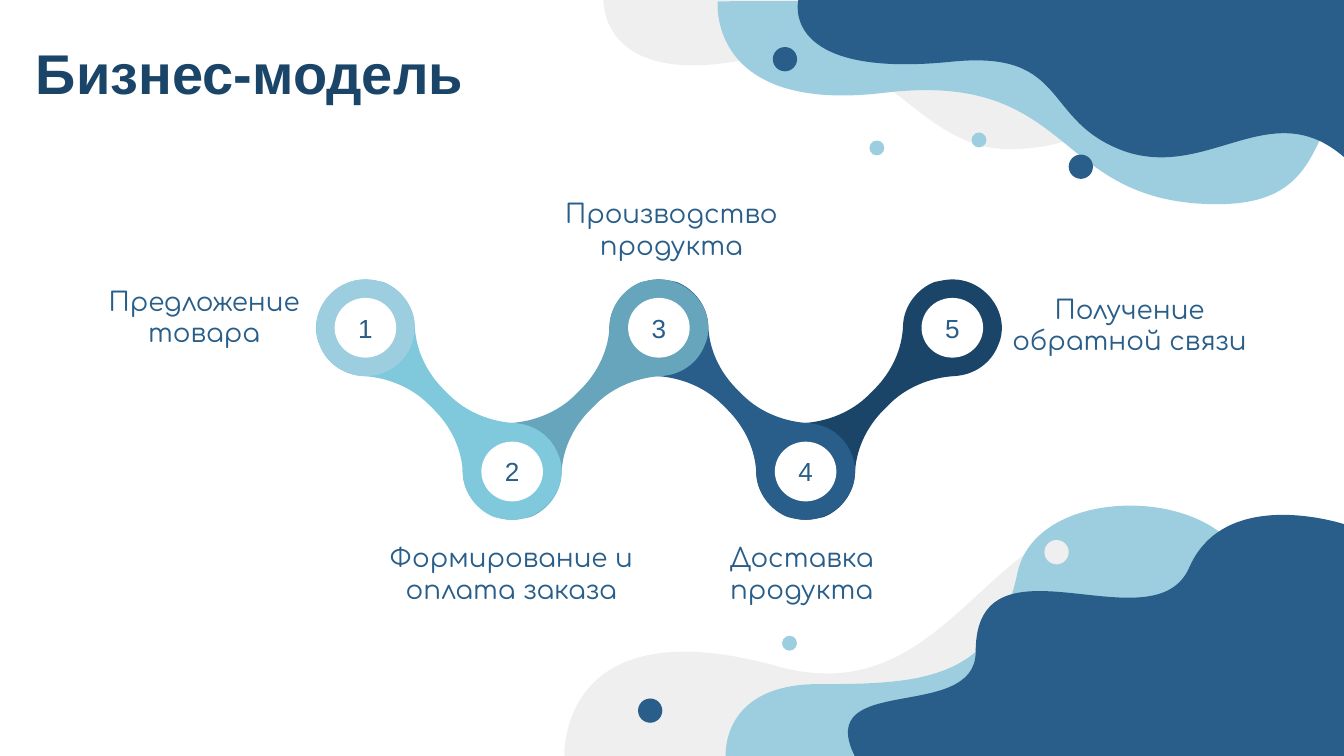
from typing import NamedTuple

from lxml import etree
from pptx import Presentation
from pptx.dml.color import RGBColor
from pptx.enum.shapes import MSO_SHAPE
from pptx.enum.text import MSO_ANCHOR, PP_ALIGN
from pptx.oxml.ns import qn
from pptx.util import Pt

OVAL = MSO_SHAPE.OVAL
TOP, MIDDLE = MSO_ANCHOR.TOP, MSO_ANCHOR.MIDDLE
LEFT, CENTER = PP_ALIGN.LEFT, PP_ALIGN.CENTER

NAVY, BLUE, TEAL, CYAN = "1A4568", "285E89", "66A5BB", "80C9DD"
SKY, GRAY, WHITE = "9DCEDF", "EFEFEF", "FFFFFF"

Point = tuple[float, float]
Segment = tuple[float, ...]  # 2 numbers: line, 6 numbers: cubic curve


class Blob(NamedTuple):
    color: str
    start: Point
    segments: list[Segment]


class Dot(NamedTuple):
    x: float
    y: float
    size: float
    color: str


class Label(NamedTuple):
    x: float
    y: float
    w: float
    h: float
    lines: tuple[str, ...]
    size: float = 14
    font: str = "Comfortaa"
    color: str = BLUE
    bold: bool = False
    align: PP_ALIGN = CENTER
    anchor: MSO_ANCHOR = TOP


BLOBS = [
    Blob(GRAY, (302.4, 405), [(302.4, 405, 298.8, 324, 416.9, 357.1),
                              (506.2, 381.6, 528.5, 277.9, 599, 277.9),
                              (650.9, 277.9, 713.5, 308.2, 694.8, 405)]),
    Blob(GRAY, (323.3, 0), [(323.3, 0, 321.1, 50.4, 407.5, 30.2),
                            (472.3, 15.1, 488.9, 79.9, 540.7, 79.9),
                            (578.2, 79.9, 624.2, 61.2, 610.6, 0)]),
    Blob(SKY, (384.5, 0.7), [(384.5, 0.7, 378.7, 61.2, 473.8, 49.7),
                             (576.7, 37.4, 563, 109.4, 652.3, 109.4),
                             (726.5, 109.4, 690.5, 41, 755.3, 35.3),
                             (820.1, 29.5, 805, 0, 805, 0)]),
    Blob(SKY, (388.8, 405), [(388.8, 405, 385.9, 366.5, 438.5, 366.5),
                             (491.8, 366.5, 532.8, 365, 545, 307.4),
                             (554.4, 260.6, 645.1, 259.9, 665.3, 298.8),
                             (685.4, 337, 720, 337, 720, 337), (720, 405)]),
    Blob(BLUE, (720, 280.8), [(720, 280.8, 656.6, 259.9, 637.2, 303.8),
                              (618.5, 347.8, 522.7, 281.5, 522.7, 349.2),
                              (522.7, 387.4, 435.6, 360, 457.9, 405), (720, 405)]),
    Blob(BLUE, (427.7, 0), [(427.7, 0, 416.9, 42.5, 509.8, 33.1),
                            (573.8, 26.6, 557.3, 65.5, 603.4, 81.4),
                            (648, 95.8, 681.1, 50.4, 720, 84.2), (720, 0)]),
]
DOTS = [
    Dot(579, 89.3, 13, BLUE), Dot(469.8, 79.3, 8, SKY), Dot(524.5, 75, 8, SKY),
    Dot(420.5, 31.7, 13, BLUE), Dot(348.3, 380.7, 13, BLUE),
    Dot(423, 344.6, 8, SKY), Dot(566, 295.8, 13, GRAY),
]
LABELS = [
    Label(12.2, 6.5, 419, 64.8, ("Бизнес-модель",), 30, "Arial", NAVY, True, LEFT, MIDDLE),
    Label(-27.4, 159.1, 273.6, 20.9, ("Предложение", "товара"), anchor=MIDDLE),
    Label(187.9, 283, 172.1, 35.3, ("Формирование и оплата заказа",)),
    Label(275.8, 103.7, 167.8, 9.4, ("Производство продукта",)),
    Label(371.5, 283, 115.9, 20.9, ("Доставка продукта",)),
    Label(519.1, 149.8, 172.1, 28.8, ("Получение обратной связи",)),
]

# Chain: nodes alternate between an upper and a lower row
NODE_X, NODE_Y, STEP, DROP = 195.8, 175.6, 78.6, 77
LINK_COLORS = [CYAN, TEAL, BLUE, NAVY]
# Left edge of a link, measured from the centre of its upper node
LINK_START = (0, -25.9)
LINK_EDGE = [
    (-7.2, -25.9, -13.7, -23, -18.7, -18),
    (-25.9, -10.8, -28.8, 0, -24.5, 9.4),
    (-20.9, 18.7, -12.2, 25.2, -1.4, 25.9),
    (11.5, 26.6, 24.5, 31.7, 33.8, 41),
    (36.7, 43.9),
    (46.1, 53.3, 51.8, 65.5, 52.2, 78.5),
    (52.6, 88.6, 59.8, 97.9, 69.1, 101.5),
    (72.7, 102.2, 75.6, 102.9, 78.6, 102.9),
]


def paint(sp, color: str) -> None:
    sp.fill.solid()
    sp.fill.fore_color.rgb = RGBColor.from_string(color)
    sp.line.fill.background()
    sp.shadow.inherit = False


def to_points(segments: list[Segment]) -> list[Point]:
    return [pt for seg in segments for pt in zip(seg[::2], seg[1::2])]


def add_outline(shapes, pts: list[Point], segments: list[Segment], color: str) -> None:
    """Build the outline, then join each three points of a curve into one node."""
    emu = [(Pt(x), Pt(y)) for x, y in pts]
    fb = shapes.build_freeform(*emu[0])
    fb.add_line_segments(emu[1:], close=True)
    sp = fb.convert_to_shape()
    paint(sp, color)
    nodes = iter(list(sp._element.iter(qn("a:lnTo"))))
    for seg in segments:
        group = [next(nodes) for _ in range(len(seg) // 2)]
        if len(group) == 3:
            curve = etree.Element(qn("a:cubicBezTo"))
            group[0].addprevious(curve)
            for node in group:
                curve.append(node[0])
                node.getparent().remove(node)


def add_oval(shapes, x: float, y: float, w: float, h: float, color: str):
    sp = shapes.add_shape(OVAL, Pt(x - w / 2), Pt(y - h / 2), Pt(w), Pt(h))
    paint(sp, color)
    return sp


def add_run(p, text: str, size: float, font: str, color: str, bold: bool = False) -> None:
    r = p.add_run()
    r.text = text
    r.font.size, r.font.name, r.font.bold = Pt(size), font, bold
    r.font.color.rgb = RGBColor.from_string(color)


def add_label(shapes, lb: Label) -> None:
    tf = shapes.add_textbox(Pt(lb.x), Pt(lb.y), Pt(lb.w), Pt(lb.h)).text_frame
    tf.word_wrap = True
    tf.vertical_anchor = lb.anchor
    tf.margin_left = tf.margin_right = tf.margin_top = tf.margin_bottom = Pt(7.2)
    for i, line in enumerate(lb.lines):
        p = tf.add_paragraph() if i else tf.paragraphs[0]
        p.alignment = lb.align
        add_run(p, line, lb.size, lb.font, lb.color, lb.bold)


def add_link(shapes, i: int, color: str) -> None:
    """Join node i to the next one; odd links rise, so they are mirrored."""
    edge = to_points(LINK_EDGE)
    pts = [LINK_START] + edge + [(STEP - x, DROP - y) for x, y in edge]
    if i % 2:
        pts = [(STEP - x, y) for x, y in pts]
    left = NODE_X + i * STEP
    add_outline(shapes, [(left + x, NODE_Y + y) for x, y in pts], LINK_EDGE * 2, color)


def add_badge(shapes, i: int) -> None:
    sp = add_oval(shapes, NODE_X + i * STEP, NODE_Y + i % 2 * DROP, 33, 32, WHITE)
    tf = sp.text_frame
    tf.margin_left = tf.margin_right = tf.margin_top = tf.margin_bottom = Pt(0)
    tf.vertical_anchor = MIDDLE
    p = tf.paragraphs[0]
    p.alignment = CENTER
    add_run(p, str(i + 1), 14, "Arial", BLUE)


def main() -> None:
    prs = Presentation()
    prs.slide_width, prs.slide_height = Pt(720), Pt(405)
    s = prs.slides.add_slide(prs.slide_layouts[6])

    # Background waves and dots
    for blob in BLOBS:
        pts = [blob.start] + to_points(blob.segments)
        add_outline(s.shapes, pts, blob.segments, blob.color)
    for dot in DOTS:
        add_oval(s.shapes, dot.x, dot.y, dot.size, dot.size, dot.color)

    # Chain, last link first so that earlier ones overlap it
    for i, color in reversed(list(enumerate(LINK_COLORS))):
        add_link(s.shapes, i, color)
    add_oval(s.shapes, NODE_X, NODE_Y, 52.6, 51.8, SKY)
    for i in range(len(LINK_COLORS) + 1):
        add_badge(s.shapes, i)

    # Title and step names
    for lb in LABELS:
        add_label(s.shapes, lb)

    prs.save("out.pptx")


if __name__ == "__main__":
    main()
